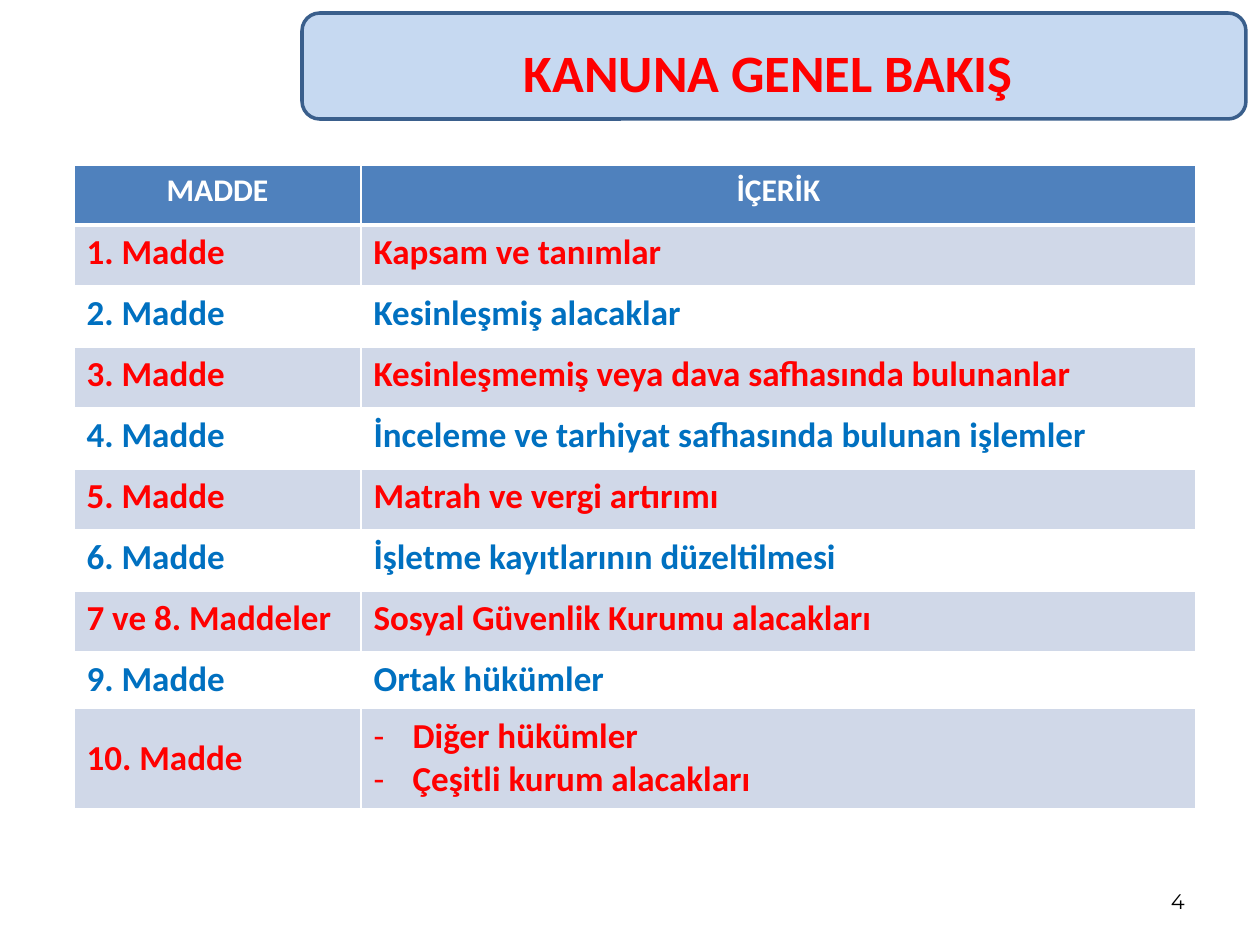
from lxml.etree import SubElement
from pptx import Presentation
from pptx.dml.color import RGBColor
from pptx.enum.shapes import MSO_SHAPE
from pptx.enum.text import MSO_ANCHOR, PP_ALIGN
from pptx.oxml.ns import qn
from pptx.util import Pt

PX = 914400 // 126
COLORS = {"banner": "C6D9F1", "outline": "3A5F8C", "header": "4F81BD",
          "band": "D0D8E8", "white": "FFFFFF", "black": "000000",
          "red": "FF0000", "blue": "0070C0"}
HEADER = ("MADDE", ["İÇERİK"])
ARTICLES = [
    ("1. Madde ", ["Kapsam ve tanımlar"]),
    ("2. Madde", ["Kesinleşmiş alacaklar"]),
    ("3. Madde", ["Kesinleşmemiş veya dava safhasında bulunanlar"]),
    ("4. Madde", ["İnceleme ve tarhiyat safhasında bulunan işlemler"]),
    ("5. Madde", ["Matrah ve vergi artırımı"]),
    ("6. Madde", ["İşletme kayıtlarının düzeltilmesi"]),
    ("7 ve 8. Maddeler", ["Sosyal Güvenlik Kurumu alacakları"]),
    ("9. Madde", ["Ortak hükümler"]),
    ("10. Madde", ["Diğer hükümler", "Çeşitli kurum alacakları "]),
]
ROW_HEIGHTS = [60] + [61] * 7 + [57, 100]
COLUMN_WIDTHS = [287, 835]


def color(name):
    return RGBColor.from_string(COLORS[name])


def emu(*lengths):
    return [n * PX for n in lengths]


def add_dash(p, indent=39):
    pPr = p._p.get_or_add_pPr()
    pPr.set("marL", str(indent * PX))
    pPr.set("indent", str(-indent * PX))
    SubElement(pPr, qn("a:buFont"), typeface="Calibri")
    SubElement(pPr, qn("a:buChar"), char="-")


def write(tf, lines, size=20, font="Calibri", fill="black", bold=True,
          align=PP_ALIGN.JUSTIFY, dashed=False):
    for i, line in enumerate(lines):
        p = tf.paragraphs[0] if i == 0 else tf.add_paragraph()
        p.alignment = align
        if dashed:
            add_dash(p)
        r = p.add_run()
        r.text = line
        r.font.name, r.font.size, r.font.bold = font, Pt(size), bold
        r.font.color.rgb = color(fill)


def add_borders(cell, top=1, bottom=1):
    tcPr = cell._tc.get_or_add_tcPr()
    for side, width in (("L", 1), ("R", 1), ("T", top), ("B", bottom)):
        ln = SubElement(tcPr, qn(f"a:ln{side}"), w=str(Pt(width)))
        solid = SubElement(ln, qn("a:solidFill"))
        SubElement(solid, qn("a:srgbClr"), val=COLORS["white"])


def add_banner(s, x, y, w, h):
    sp = s.shapes.add_shape(MSO_SHAPE.ROUNDED_RECTANGLE, *emu(x, y, w, h))
    sp.shadow.inherit = False
    sp.fill.solid()
    sp.fill.fore_color.rgb = color("banner")
    sp.line.color.rgb = color("outline")
    sp.line.width = Pt(2)
    # Title, raised above the banner
    title = s.shapes.title
    title.left, title.top, title.width, title.height = emu(
        x + 31, y + 24, w - 61, h - 37)
    title.element.getparent().append(title.element)
    tf = title.text_frame
    tf.word_wrap = True
    tf.vertical_anchor = MSO_ANCHOR.MIDDLE
    write(tf, ["KANUNA GENEL BAKIŞ "], size=30, fill="red",
          align=PP_ALIGN.CENTER)


def add_articles(s, x, y):
    rows = [HEADER] + ARTICLES
    box = emu(x, y, sum(COLUMN_WIDTHS), sum(ROW_HEIGHTS))
    table = s.shapes.add_table(len(rows), 2, *box).table
    for column, width in zip(table.columns, COLUMN_WIDTHS):
        column.width = width * PX
    for i, (article, content) in enumerate(rows):
        table.rows[i].height = ROW_HEIGHTS[i] * PX
        odd = i % 2 == 1
        for j, lines in enumerate(([article], content)):
            cell = table.cell(i, j)
            add_borders(cell, top=3 if i == 1 else 1, bottom=3 if i == 0 else 1)
            cell.fill.solid()
            if i == 0:
                cell.fill.fore_color.rgb = color("header")
                write(cell.text_frame, lines, size=18, fill="white",
                      align=PP_ALIGN.CENTER)
            else:
                cell.fill.fore_color.rgb = color("band" if odd else "white")
                write(cell.text_frame, lines, fill="red" if odd else "blue",
                      dashed=len(lines) > 1)
    table.cell(len(rows) - 1, 0).vertical_anchor = MSO_ANCHOR.MIDDLE


def add_page_number(s, x, y, w, h):
    tf = s.shapes.add_textbox(*emu(x, y, w, h)).text_frame
    tf.word_wrap = True
    tf.vertical_anchor = MSO_ANCHOR.MIDDLE
    write(tf, ["4"], size=12, font="Montserrat", bold=False,
          align=PP_ALIGN.RIGHT)


def main():
    prs = Presentation()
    prs.slide_width, prs.slide_height = emu(1260, 945)
    s = prs.slides.add_slide(prs.slide_layouts[5])
    add_banner(s, 302, 13, 944, 106)
    add_page_number(s, 903, 876, 294, 50)
    add_articles(s, 74, 165)
    prs.save("out.pptx")


if __name__ == "__main__":
    main()
